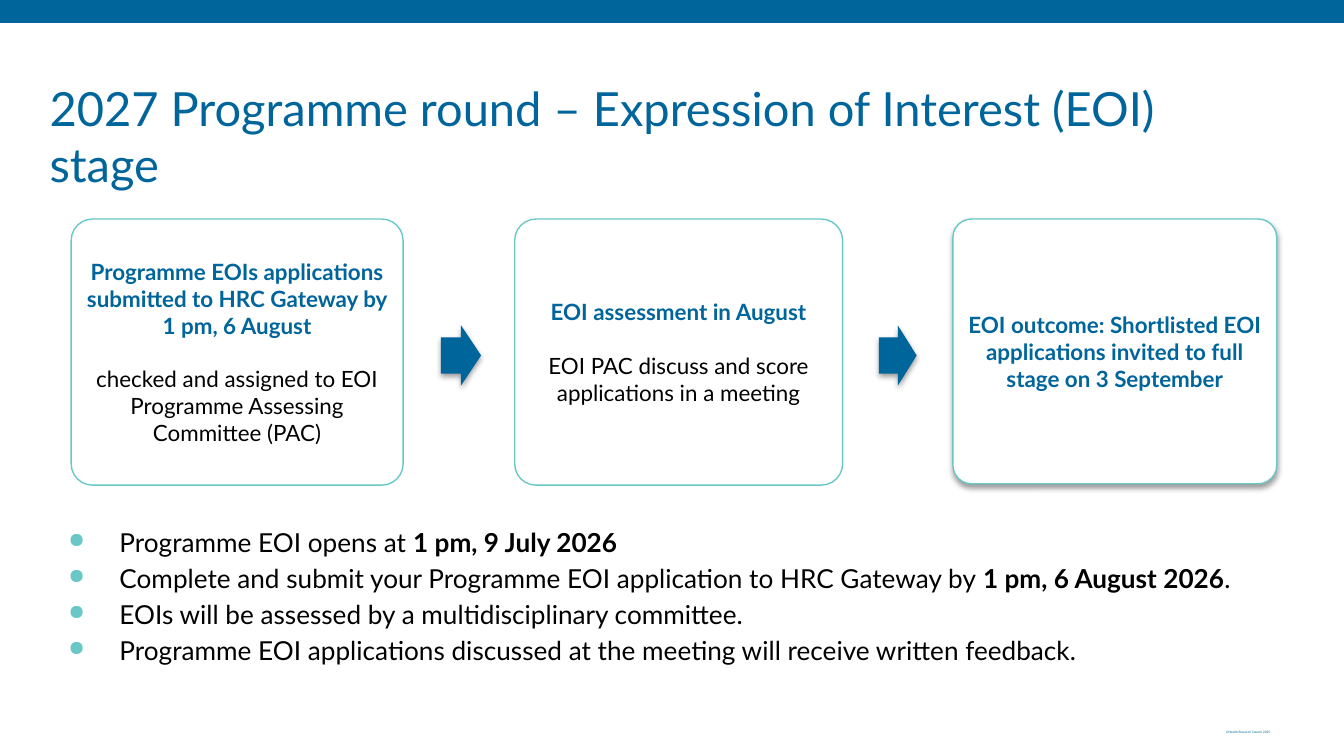
from dataclasses import dataclass

from lxml import etree
from pptx import Presentation
from pptx.dml.color import RGBColor
from pptx.enum.shapes import MSO_SHAPE
from pptx.enum.text import MSO_ANCHOR, PP_ALIGN
from pptx.oxml.ns import qn
from pptx.util import Inches, Pt

RECTANGLE = MSO_SHAPE.RECTANGLE
ROUNDED = MSO_SHAPE.ROUNDED_RECTANGLE
ARROW = MSO_SHAPE.RIGHT_ARROW
TOP, MIDDLE = MSO_ANCHOR.TOP, MSO_ANCHOR.MIDDLE
LEFT, CENTER, RIGHT = PP_ALIGN.LEFT, PP_ALIGN.CENTER, PP_ALIGN.RIGHT


@dataclass(frozen=True)
class Theme:
    font: str = "Lato"
    blue: RGBColor = RGBColor(0x00, 0x65, 0x9B)
    teal: RGBColor = RGBColor(0x67, 0xC8, 0xC7)
    black: RGBColor = RGBColor(0, 0, 0)
    white: RGBColor = RGBColor(255, 255, 255)
    title: float = 25.2
    body: float = 14
    card: float = 12
    footer: float = 3


theme = Theme()


def write(paragraph, spans, size, color, align=LEFT):
    """Add (text, bold) spans to a paragraph in one size and colour."""
    paragraph.alignment = align
    for text, bold in spans:
        span = paragraph.add_run()
        span.text = text
        span.font.name = theme.font
        span.font.size = Pt(size)
        span.font.bold = bold
        span.font.color.rgb = color


def add_shadow(shape):
    """Cast a soft black shadow straight down."""
    effects = etree.SubElement(shape._element.spPr, qn("a:effectLst"))
    shadow = etree.SubElement(effects, qn("a:outerShdw"), blurRad=str(Pt(3.1)),
                              dist=str(Pt(1.6)), dir="5400000", rotWithShape="0")
    color = etree.SubElement(shadow, qn("a:srgbClr"), val="000000")
    etree.SubElement(color, qn("a:alpha"), val="38000")


# A 16:9 page, 10 inches wide
deck = Presentation()
deck.slide_width = Inches(10)
deck.slide_height = Inches(10 * 9 / 16)
page = deck.slides.add_slide(deck.slide_layouts[6])

# Top band
band = page.shapes.add_shape(RECTANGLE, Inches(-0.03), Inches(-0.01), Inches(10.04), Inches(0.18))
band.shadow.inherit = False
band.fill.solid()
band.fill.fore_color.rgb = theme.blue
band.line.fill.background()

# Text boxes: footer, title, bullet list
frames = []
for left, top, width, height, anchor in [(7.28, 5.31, 2.27, 0.25, MIDDLE),
                                         (0.27, 0.49, 8.45, 0.63, TOP),
                                         (0.29, 3.78, 9.32, 1.46, TOP)]:
    box = page.shapes.add_textbox(Inches(left), Inches(top), Inches(width), Inches(height))
    frame = box.text_frame
    frame.word_wrap = True
    frame.vertical_anchor = anchor
    frame.margin_left = frame.margin_right = Inches(0.1)
    frame.margin_top = frame.margin_bottom = Inches(0.1)
    frames.append(frame)
footer, title, body = frames

para = footer.paragraphs[0]
write(para, [("©Health Research Council 2025", False)], theme.footer, theme.blue, RIGHT)
para.runs[0]._r.get_or_add_rPr().set("baseline", "-25000")

write(title.paragraphs[0],
      [("2027 Programme round – Expression of Interest (EOI) stage", False)],
      theme.title, theme.blue)

bullets = [
    [("Programme EOI opens at ", False), ("1 pm, 9 July 2026", True)],
    [("Complete and submit your Programme EOI application to HRC Gateway by ", False),
     ("1 pm, 6 August 2026", True), (".", False)],
    [("EOIs will be assessed by a multidisciplinary committee.", False)],
    [("Programme EOI applications discussed at the meeting will receive written feedback.", False)],
]
for index, spans in enumerate(bullets):
    para = body.paragraphs[0] if index == 0 else body.add_paragraph()
    para.line_spacing = 1.15
    properties = para._p.get_or_add_pPr()
    properties.set("marL", str(Inches(0.5)))
    properties.set("indent", str(Inches(-0.38)))
    bullet_color = etree.SubElement(properties, qn("a:buClr"))
    etree.SubElement(bullet_color, qn("a:srgbClr"), val=str(theme.teal))
    etree.SubElement(properties, qn("a:buSzPct"), val="80000")
    etree.SubElement(properties, qn("a:buChar"), char="●")
    write(para, spans, theme.body, theme.black)

# Stage cards: left, width, height, corner ratio, heading, detail
cards = [
    (0.53, 2.47, 1.98, 0.08,
     "Programme EOIs applications submitted to HRC Gateway by 1 pm, 6 August",
     "checked and assigned to EOI Programme Assessing Committee (PAC)"),
    (3.83, 2.44, 1.98, 0.08, "EOI assessment in August",
     "EOI PAC discuss and score applications in a meeting"),
    (7.09, 2.41, 1.97, 0.07,
     "EOI outcome: Shortlisted EOI applications invited to full stage on 3 September", None),
]
for left, width, height, corner, heading, detail in cards:
    card = page.shapes.add_shape(ROUNDED, Inches(left), Inches(1.63), Inches(width), Inches(height))
    card.adjustments[0] = corner
    card.fill.solid()
    card.fill.fore_color.rgb = theme.white
    card.line.color.rgb = theme.teal
    card.line.width = Pt(0.75)
    frame = card.text_frame
    frame.word_wrap = True
    frame.vertical_anchor = MIDDLE
    # The rounded corners already push the text in by about 0.05
    frame.margin_left = frame.margin_right = Inches(0.05)
    frame.margin_top = frame.margin_bottom = Inches(0.05)
    write(frame.paragraphs[0], [(heading, True)], theme.card, theme.blue, CENTER)
    if detail:
        para = frame.add_paragraph()
        para.space_before = Pt(14.4)
        write(para, [(detail, False)], theme.card, theme.black, CENTER)
        card.shadow.inherit = False
    else:
        add_shadow(card)

# Arrows between the cards
for left, width in [(3.28, 0.3), (6.54, 0.28)]:
    arrow = page.shapes.add_shape(ARROW, Inches(left), Inches(2.42), Inches(width), Inches(0.45))
    arrow.adjustments[0] = 0.6
    arrow.adjustments[1] = 0.5
    arrow.fill.solid()
    arrow.fill.fore_color.rgb = theme.blue
    arrow.line.fill.background()
    add_shadow(arrow)

deck.save("out.pptx")
